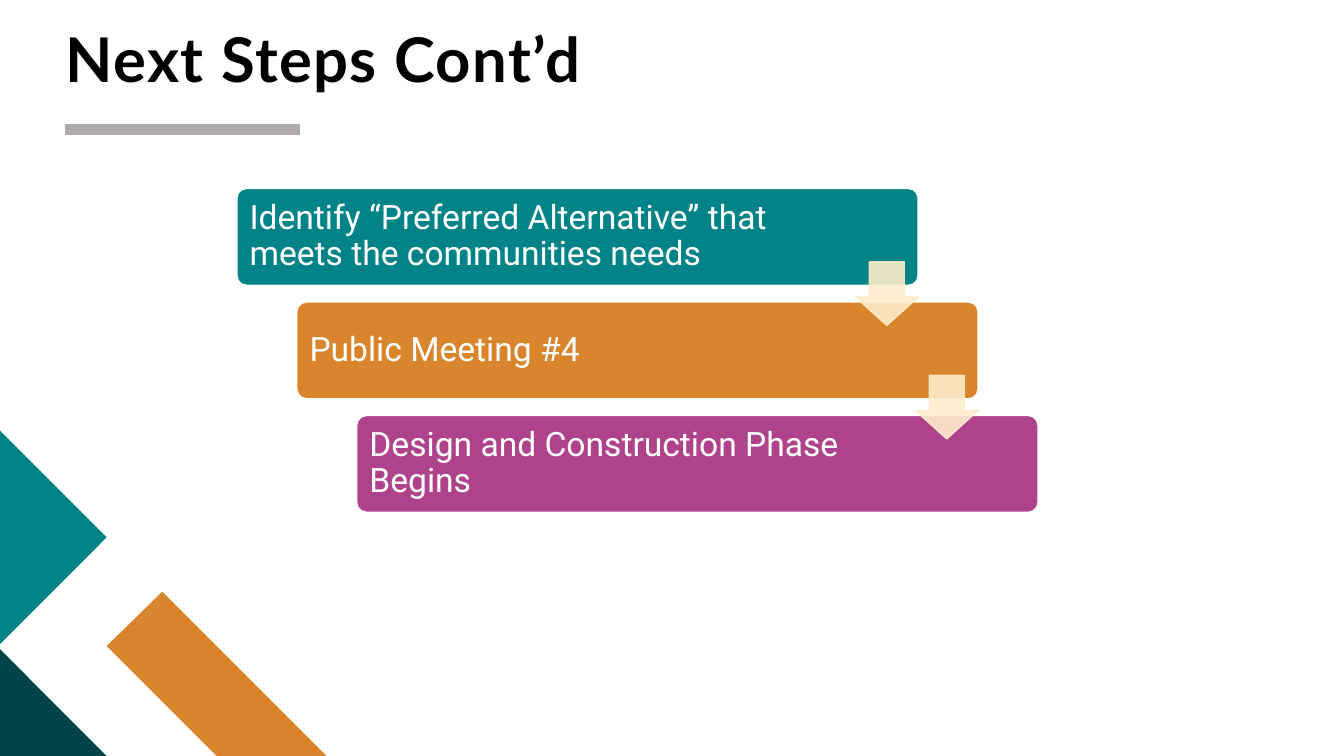
from lxml import etree
from pptx import Presentation
from pptx import util as u
from pptx.dml.color import RGBColor
from pptx.enum import shapes, text
from pptx.oxml.ns import qn

BLACK = RGBColor(0x00, 0x00, 0x00)
WHITE = RGBColor(0xFF, 0xFF, 0xFF)
GREY = RGBColor(0xAF, 0xAB, 0xAB)
TEAL = RGBColor(0x00, 0x83, 0x87)
DARK_TEAL = RGBColor(0x01, 0x45, 0x48)
ORANGE = RGBColor(0xD8, 0x85, 0x2C)
PURPLE = RGBColor(0xAF, 0x43, 0x8B)
CREAM = RGBColor(0xFD, 0xEC, 0xCC)

STEPS = [
    ("Identify “Preferred Alternative” that meets the communities needs", TEAL),
    ("Public Meeting #4", ORANGE),
    ("Design and Construction Phase Begins", PURPLE),
]
CORNER_PIECES = [
    (ORANGE, [(8.23, 0), (5.46, 0), (2.69, 2.77), (4.09, 4.14)]),
    (DARK_TEAL, [(2.69, 0), (0, 0), (0, 2.69)]),
    (TEAL, [(0, 8.2), (2.69, 5.51), (0, 2.82)]),
]


def set_frame(frame, anchor, inset):
    """Wrap a text frame, anchor it and give it equal insets in cm."""
    frame.word_wrap = True
    frame.auto_size = text.MSO_AUTO_SIZE.NONE
    frame.vertical_anchor = anchor
    frame.margin_left = frame.margin_right = u.Cm(inset)
    frame.margin_top = frame.margin_bottom = u.Cm(inset)


def set_text(frame, wording, font_name, size, color, spacing):
    """Write one left-aligned paragraph and return its run."""
    frame.text = wording
    para = frame.paragraphs[0]
    para.alignment = text.PP_ALIGN.LEFT
    para.line_spacing = spacing
    span = para.runs[0]
    span.font.name = font_name
    span.font.size = u.Pt(size)
    span.font.color.rgb = color
    return span


def add_corner(page, left, bottom):
    """Draw the diagonal pieces upward from a bottom left corner."""
    for color, points in CORNER_PIECES:
        corners = [(u.Cm(left + x), u.Cm(bottom - y)) for x, y in points]
        builder = page.shapes.build_freeform(*corners[0])
        builder.add_line_segments(corners[1:], close=True)
        piece = builder.convert_to_shape()
        piece.shadow.inherit = False
        piece.fill.solid()
        piece.fill.fore_color.rgb = color
        piece.line.fill.background()


def add_heading(page, left, top, width, height):
    """Place the title and the grey rule beneath it."""
    title = page.shapes.title
    title.left, title.top = u.Cm(left), u.Cm(top)
    title.width, title.height = u.Cm(width), u.Cm(height)
    set_frame(title.text_frame, text.MSO_ANCHOR.BOTTOM, 0)
    span = set_text(title.text_frame, "Next Steps Cont’d", "Lato", 44, BLACK, 0.8)
    span.font.bold = True
    span.font._element.set("spc", "100")

    rule_y = u.Cm(top + height + 0.88)
    rule = page.shapes.add_connector(
        shapes.MSO_CONNECTOR.STRAIGHT, u.Cm(left), rule_y, u.Cm(left + 5.92), rule_y)
    rule.line.color.rgb = GREY
    rule.line.width = u.Pt(8)
    etree.SubElement(rule._element.spPr, qn("a:effectLst"))


def add_panel(page, kind, box, adjustments, fill, line):
    """Draw a filled, outlined preset shape in a box given in cm."""
    panel = page.shapes.add_shape(kind, *(u.Cm(length) for length in box))
    for index, value in enumerate(adjustments):
        panel.adjustments[index] = value
    panel.shadow.inherit = False
    panel.fill.solid()
    panel.fill.fore_color.rgb = fill
    panel.line.color.rgb = line
    panel.line.width = u.Pt(1)
    return panel


def add_steps(page, left, top, width, height):
    """Draw the staggered steps, then the arrows that join them."""
    places = [(left + 1.51 * i, top + 2.86 * i) for i in range(len(STEPS))]
    for (x, y), (wording, color) in zip(places, STEPS):
        step = add_panel(page, shapes.MSO_SHAPE.ROUNDED_RECTANGLE,
                         (x, y, width, height), [0.1], color, WHITE)
        set_frame(step.text_frame, text.MSO_ANCHOR.MIDDLE, 0.25)
        step.text_frame.margin_right = u.Cm(3.2)
        set_text(step.text_frame, wording, "Roboto", 24, WHITE, 0.9)
    for x, y in places[:-1]:
        arrow = add_panel(page, shapes.MSO_SHAPE.DOWN_ARROW,
                          (x + width - 1.59, y + 1.85, 1.6, 1.6),
                          [0.55, 0.45], CREAM, CREAM)
        for color in arrow._element.spPr.iter(qn("a:srgbClr")):
            etree.SubElement(color, qn("a:alpha"), val="90000")


def main():
    """Build and save the slide."""
    deck = Presentation()
    deck.slide_width, deck.slide_height = u.Cm(33.87), u.Cm(19.05)
    page = deck.slides.add_slide(deck.slide_layouts[5])
    add_corner(page, 0, 19.05)
    add_heading(page, 1.65, 0.28, 30.2, 2.11)
    add_steps(page, 5.97, 4.75, 17.17, 2.44)
    deck.save("out.pptx")


if __name__ == "__main__":
    main()
